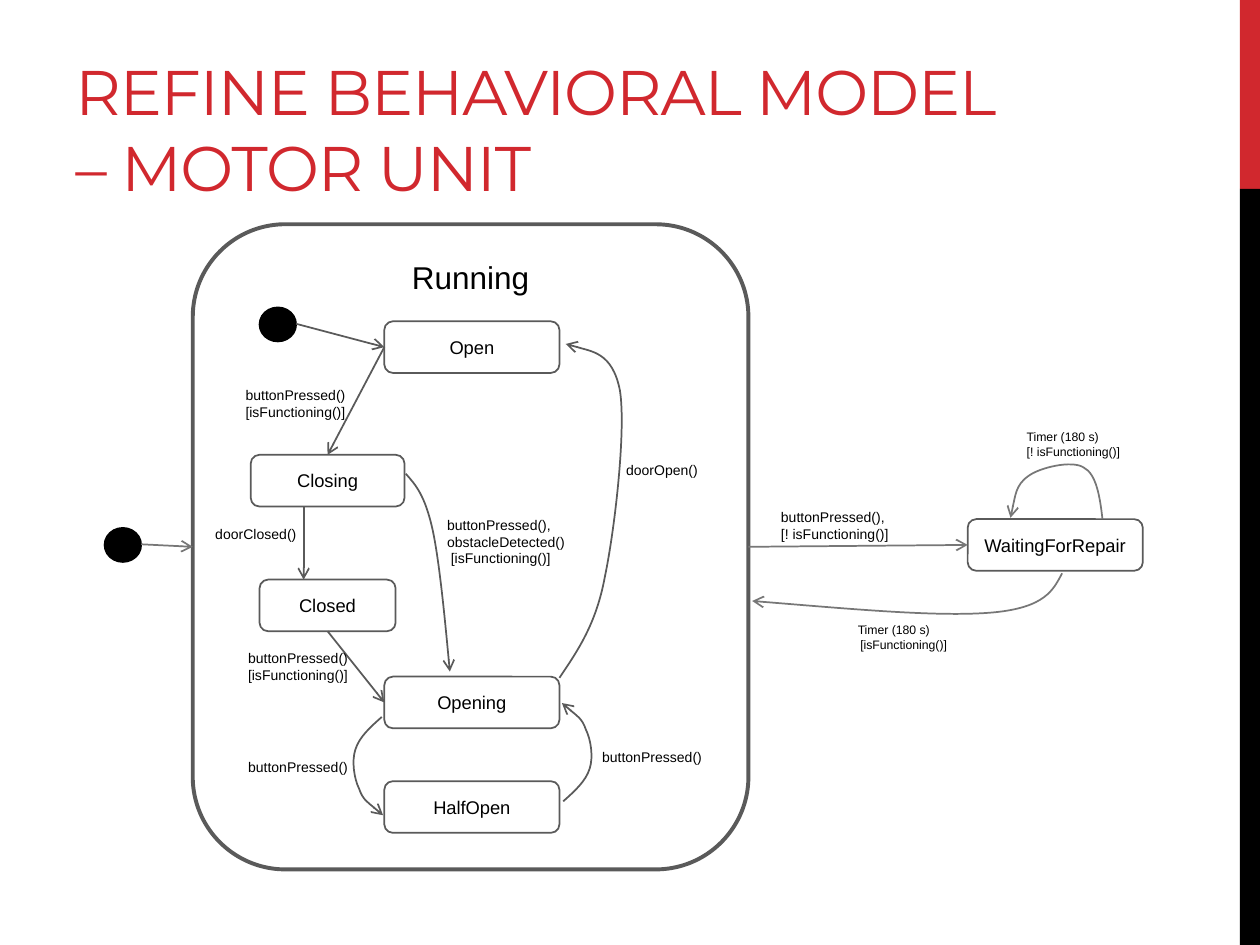
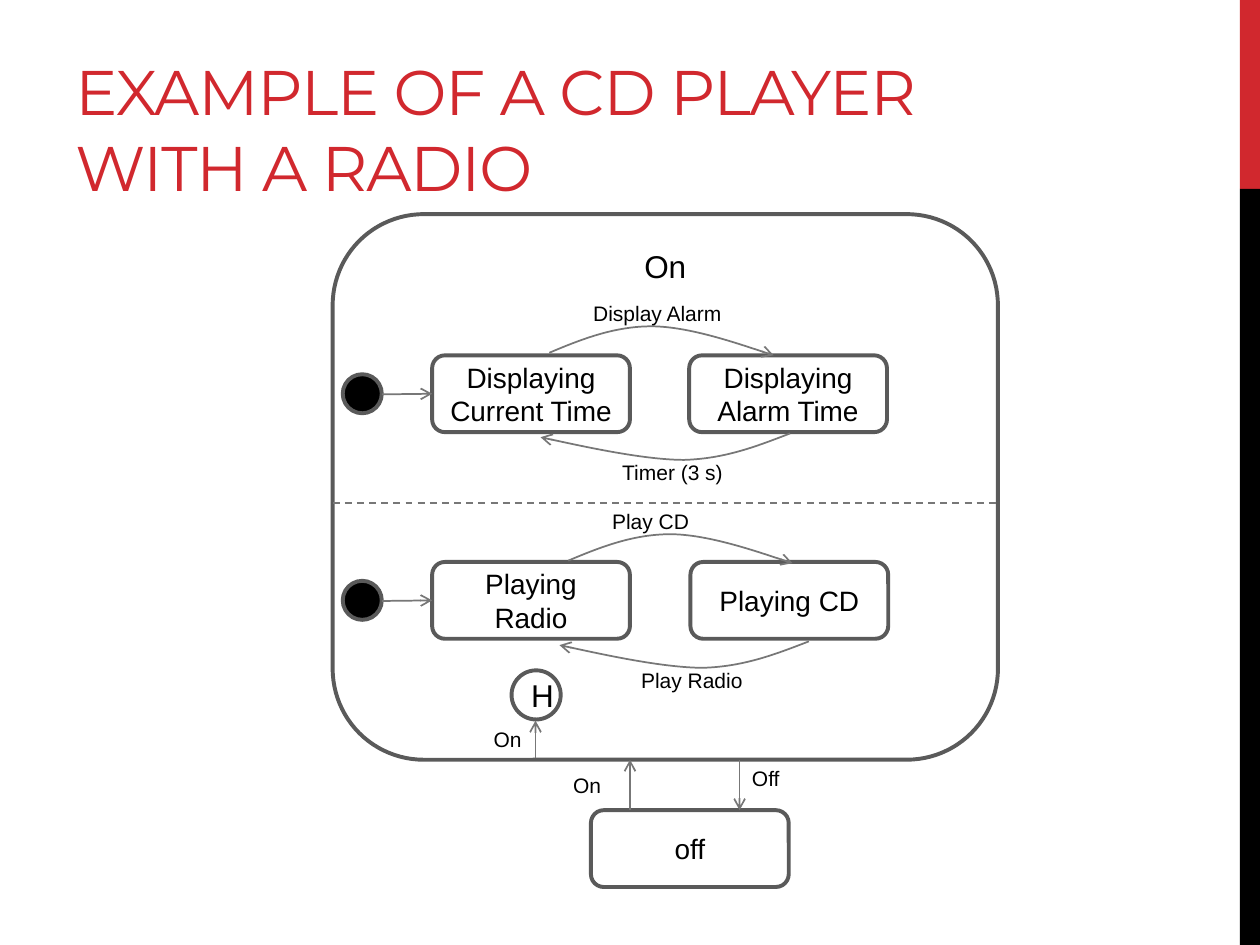
from dataclasses import dataclass

from lxml.etree import SubElement
from pptx import Presentation
from pptx.dml.color import RGBColor
from pptx.enum.dml import MSO_LINE
from pptx.enum.shapes import MSO_CONNECTOR, MSO_SHAPE
from pptx.enum.text import MSO_ANCHOR, PP_ALIGN
from pptx.oxml.ns import qn
from pptx.util import Inches, Pt


@dataclass(frozen=True)
class Theme:
    red: str = "D1282E"
    black: str = "000000"
    outline: str = "5A5A5A"
    arrow: str = "777777"
    title_font: str = "Montserrat"
    body_font: str = "Arial"
    title: float = 36
    region: float = 18
    player_state: float = 16
    player_label: float = 12
    motor_state: float = 10.5
    motor_label: float = 8
    timer_label: float = 7
    thin: float = 1
    thick: float = 2.25


T = Theme()


def rgb(value):
    return RGBColor.from_string(value)


def style_paragraph(p, size, color=T.black, font=T.body_font):
    p.font.size = Pt(size)
    p.font.name = font
    p.font.color.rgb = rgb(color)


def style_line(line, color, width, arrow=False, dash=False):
    line.color.rgb = rgb(color)
    line.width = Pt(width)
    if dash:
        line.dash_style = MSO_LINE.DASH
    if arrow:
        SubElement(line._get_or_add_ln(), qn("a:tailEnd"), type="arrow")


class Region:
    def __init__(self, s, left, top):
        self.s, self.left, self.top = s, left, top

    def at(self, x, y):
        return Inches(self.left + x), Inches(self.top + y)

    def shape(self, kind, x, y, w, h, line=T.outline, width=T.thin, fill=None):
        sp = self.s.shapes.add_shape(kind, *self.at(x, y), Inches(w), Inches(h))
        sp.shadow.inherit = False
        if fill:
            sp.fill.solid()
            sp.fill.fore_color.rgb = rgb(fill)
        else:
            sp.fill.background()
        style_line(sp.line, line, width)
        return sp

    def state(self, text, x, y, w, h, size, width=T.thin, kind=MSO_SHAPE.ROUNDED_RECTANGLE):
        sp = self.shape(kind, x, y, w, h, width=width)
        tf = sp.text_frame
        tf.word_wrap = True
        tf.text = text
        tf.paragraphs[0].alignment = PP_ALIGN.CENTER
        style_paragraph(tf.paragraphs[0], size)
        return sp

    def frame(self, text, w, h):
        sp = self.state(text, 0, 0, w, h, T.region, T.thick)
        sp.text_frame.vertical_anchor = MSO_ANCHOR.TOP
        return sp

    def label(self, text, x, y, w, h, size, last_indent=0):
        tf = self.s.shapes.add_textbox(*self.at(x, y), Inches(w), Inches(h)).text_frame
        tf.word_wrap = True
        tf.text = text
        if last_indent:
            tf.paragraphs[-1]._p.get_or_add_pPr().set("marL", str(Inches(last_indent)))
        for p in tf.paragraphs:
            style_paragraph(p, size)

    def line(self, start, end, color=T.arrow, arrow=True, dash=False):
        is_point = [isinstance(e[0], (int, float)) for e in (start, end)]
        begin_at = self.at(*start) if is_point[0] else self.at(0, 0)
        end_at = self.at(*end) if is_point[1] else self.at(0, 0)
        cn = self.s.shapes.add_connector(MSO_CONNECTOR.STRAIGHT, *begin_at, *end_at)
        if not is_point[0]:
            cn.begin_connect(*start)
        if not is_point[1]:
            cn.end_connect(*end)
        style_line(cn.line, color, T.thin, arrow, dash)
        SubElement(cn._element.spPr, qn("a:effectLst"))

    def curve(self, points, color=T.arrow):
        spots = [self.at(x, y) for x, y in points]
        fb = self.s.shapes.build_freeform(*spots[0])
        fb.add_line_segments(spots[3::3], close=False)
        sp = fb.convert_to_shape()
        segments = list(sp._element.iter(qn("a:lnTo")))
        for i, segment in enumerate(segments):
            segment.tag = qn("a:cubicBezTo")
            end = segment[0]
            for x, y in spots[3 * i + 1:3 * i + 3]:
                pt = SubElement(segment, qn("a:pt"), x=str(x - sp.left), y=str(y - sp.top))
                end.addprevious(pt)
        sp.shadow.inherit = False
        sp.fill.background()
        style_line(sp.line, color, T.thin, arrow=True)


def add_base_slide(prs, title):
    s = prs.slides.add_slide(prs.slide_layouts[6])
    for top, height, color in ((0, 1.5, T.red), (1.5, 6, T.black)):
        band = Region(s, 9.84, top).shape(MSO_SHAPE.RECTANGLE, 0, 0, 0.16, height, fill=color)
        band.line.fill.background()
    tf = s.shapes.add_textbox(Inches(0.5), Inches(0.17), Inches(7.58), Inches(1.5)).text_frame
    tf.word_wrap = True
    tf.vertical_anchor = MSO_ANCHOR.BOTTOM
    p = tf.paragraphs[0]
    r = p.add_run()
    r.text = title
    r._r.get_or_add_rPr().set("spc", "-60")
    style_paragraph(p, T.title, T.red, T.title_font)
    return s


def add_running(s, left, top):
    box = Region(s, left, top)
    states = {
        name: box.state(name, x, y, w, 0.41, T.motor_state)
        for name, x, y, w in (
            ("Open", 1.52, 0.77, 1.39),
            ("Closing", 0.46, 1.83, 1.22),
            ("Closed", 0.53, 2.82, 1.08),
            ("Opening", 1.52, 3.59, 1.39),
            ("HalfOpen", 1.52, 4.42, 1.39),
        )
    }
    box.shape(MSO_SHAPE.OVAL, 0.53, 0.66, 0.29, 0.27, T.black, fill=T.black)
    for start, end in (
        ((0.82, 0.79), (states["Open"], 1)),
        ((states["Open"], 1), (states["Closing"], 0)),
        ((0.88, 2.24), (0.88, 2.82)),
        ((states["Closed"], 2), (states["Opening"], 1)),
    ):
        box.line(start, end, T.outline)

    obstacle = [(1.69, 1.98), (1.77, 2.07), (1.84, 2.15), (1.9, 2.41),
                (1.96, 2.67), (2.04, 3.55), (2.04, 3.55)]
    door_open = [(2.91, 3.6), (3.05, 3.39), (3.2, 3.18), (3.27, 2.8), (3.35, 2.42),
                 (3.44, 1.63), (3.39, 1.32), (3.33, 1.01), (2.96, 0.95), (2.96, 0.95)]
    stop = [(1.5, 3.91), (1.41, 3.99), (1.32, 4.07), (1.29, 4.17), (1.26, 4.26),
            (1.28, 4.4), (1.32, 4.48), (1.35, 4.57), (1.51, 4.69), (1.51, 4.69)]
    resume = [(4.44 - x, 8.49 - y) for x, y in stop]
    for points in (obstacle, door_open, stop, resume):
        box.curve(points, T.outline)

    guarded = "buttonPressed() [isFunctioning()]"
    for text, x, y, w, h in (
        (guarded, 0.32, 1.24, 1.39, 0.37),
        (guarded, 0.34, 3.33, 1.39, 0.37),
        ("buttonPressed()", 0.34, 4.19, 1.05, 0.23),
        ("buttonPressed()", 3.15, 4.11, 1.13, 0.24),
        ("doorOpen()", 3.34, 1.83, 1.18, 0.31),
        ("doorClosed()", 0.08, 2.34, 0.89, 0.24),
    ):
        box.label(text, x, y, w, h, T.motor_label)
    box.label("buttonPressed(),\nobstacleDetected()\n[isFunctioning()]",
              1.92, 2.27, 1.23, 0.5, T.motor_label, last_indent=0.03)
    return box.frame("Running", 4.41, 5.12)


def add_repair(s, left, top, running):
    box = Region(s, left, top)
    waiting = box.state("WaitingForRepair", 1.74, 0.76, 1.39, 0.41, T.motor_state)
    box.line((running, 3), (waiting, 1))
    box.curve([(2.81, 0.76), (2.79, 0.58), (2.76, 0.4), (2.66, 0.35), (2.57, 0.29),
               (2.31, 0.35), (2.22, 0.42), (2.12, 0.49), (2.08, 0.75), (2.08, 0.75)])
    box.curve([(2.49, 1.19), (2.42, 1.32), (2.36, 1.46), (1.95, 1.5),
               (1.53, 1.54), (0.78, 1.47), (0.03, 1.41)])
    box.label("buttonPressed(),\n[! isFunctioning()]", 0.16, 0.63, 1.23, 0.37, T.motor_label)
    box.label("Timer (180 s)\n[! isFunctioning()]", 2.11, 0, 1.12, 0.34, T.timer_label)
    box.label("Timer (180 s)\n[isFunctioning()]", 0.77, 1.53, 0.97, 0.34,
              T.timer_label, last_indent=0.02)


def add_entry(s, left, top, running):
    box = Region(s, left, top)
    box.shape(MSO_SHAPE.OVAL, 0, 0, 0.29, 0.27, T.black, fill=T.black)
    box.line((0.29, 0.13), (running, 1))


def add_mode_cycle(s, left, top, first, second, forward, back, dx=0, dy=0):
    box = Region(s, left, top)
    initial = box.state(first, 0.79, 0, 1.57, 0.61, T.player_state, T.thick)
    box.state(second, 2.83 + dy, 0, 1.57, 0.61, T.player_state, T.thick)
    box.shape(MSO_SHAPE.OVAL, 0.08, 0.15, 0.31, 0.31, width=T.thick, fill=T.black)
    box.line((0.39, 0.31), (initial, 1))
    arcs = Region(s, left + dx, top + dy)
    arcs.curve([(1.72, -0.02), (1.98, -0.13), (2.24, -0.23), (2.53, -0.23),
                (2.83, -0.23), (3.5, 0), (3.5, 0)])
    arcs.curve([(3.63, 0.62), (3.37, 0.72), (3.12, 0.82), (2.79, 0.83),
                (2.46, 0.83), (1.65, 0.65), (1.65, 0.65)])
    arcs.label(forward, 1.97, -0.48, 1.26, 0.3, T.player_label)
    arcs.label(back, 2.2, 0.78, 1.26, 0.3, T.player_label)


def add_player(s, left, top):
    box = Region(s, left, top)
    box.frame("On", 5.28, 4.33)
    add_mode_cycle(s, left, top + 1.12, "Displaying Current Time", "Displaying Alarm Time",
                   "Display Alarm", "Timer (3 s)")
    box.line((0, 2.29), (5.27, 2.29), arrow=False, dash=True)
    add_mode_cycle(s, left, top + 2.76, "Playing Radio", "Playing CD",
                   "Play CD", "Play Radio", dx=0.15, dy=0.01)


def add_power(s, left, top):
    box = Region(s, left, top)
    box.state("H", 0.24, 0, 0.39, 0.39, T.region, T.thick, MSO_SHAPE.OVAL)
    box.state("off", 0.87, 1.11, 1.57, 0.61, T.player_state, T.thick)
    for text, x, y, start, end in (
        ("Off", 2.05, 0.71, (2.05, 0.71), (2.05, 1.11)),
        ("On", 0.63, 0.76, (1.18, 1.11), (1.18, 0.71)),
        ("On", 0, 0.4, (0.43, 0.7), (0.43, 0.4)),
    ):
        box.line(start, end)
        box.label(text, x, y, 0.63, 0.3, T.player_label)


def add_motor_slide(prs):
    s = add_base_slide(prs, "REFINE BEHAVIORAL MODEL – MOTOR UNIT")
    running = add_running(s, 1.53, 1.78)
    add_repair(s, 5.94, 3.36, running)
    add_entry(s, 0.83, 4.19, running)


def add_player_slide(prs):
    s = add_base_slide(prs, "EXAMPLE OF A CD PLAYER WITH A RADIO")
    add_player(s, 2.64, 1.7)
    add_power(s, 3.82, 5.32)


def main():
    prs = Presentation()
    prs.slide_width, prs.slide_height = Inches(10), Inches(7.5)
    add_motor_slide(prs)
    add_player_slide(prs)
    prs.save("out.pptx")


if __name__ == "__main__":
    main()
